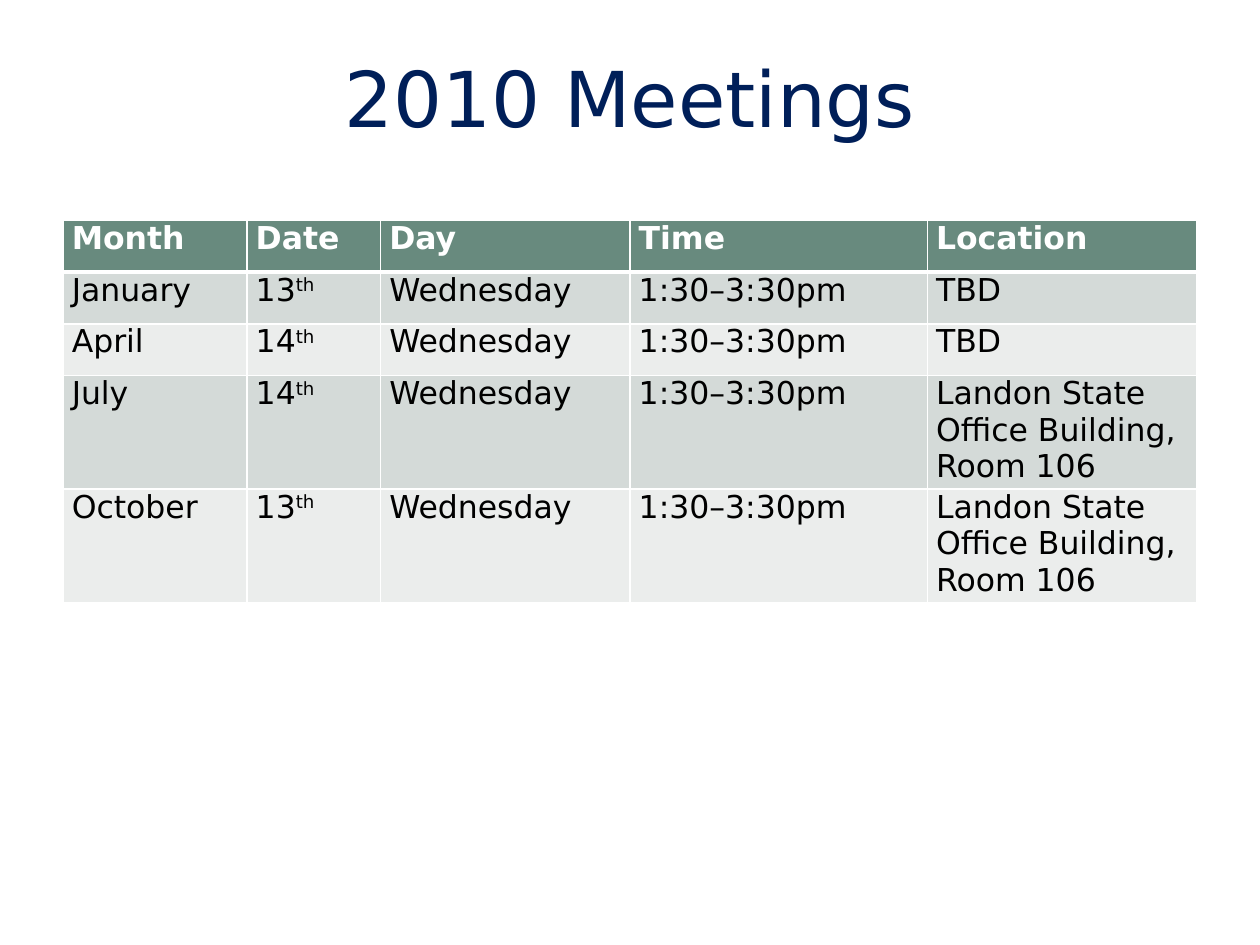
import pptx
import pptx.util
import pptx.dml.color
import pptx.enum.text
import pptx.oxml
import pptx.oxml.ns

Inches = pptx.util.Inches
Pt = pptx.util.Pt
RGBColor = pptx.dml.color.RGBColor

FONT = "DejaVu Sans"
NAVY = RGBColor(0x00, 0x1F, 0x59)
GREEN = RGBColor(0x68, 0x8A, 0x7E)
DARK_BAND = RGBColor(0xD4, 0xDA, 0xD8)
LIGHT_BAND = RGBColor(0xEB, 0xED, 0xEC)
WHITE = RGBColor(0xFF, 0xFF, 0xFF)
BLACK = RGBColor(0x00, 0x00, 0x00)

DAY = "Wednesday"
TIME = "1:30–3:30pm"
LANDON = "Landon State Office Building, Room 106"
ROWS = [
    ("Month", "Date", "Day", "Time", "Location"),
    ("January", "13th", DAY, TIME, "TBD"),
    ("April", "14th", DAY, TIME, "TBD"),
    ("July", "14th", DAY, TIME, LANDON),
    ("October", "13th", DAY, TIME, LANDON),
]
COLUMN_WIDTHS = [1.46, 1.06, 1.98, 2.36, 2.14]
ROW_HEIGHTS = [0.41, 0.41, 0.41, 0.87, 0.87]


def style_font(paragraph, size, color, bold=False):
    paragraph.font.name = FONT
    paragraph.font.size = Pt(size)
    paragraph.font.bold = bold
    paragraph.font.color.rgb = color


def add_border(cell, side, width):
    cell._tc.get_or_add_tcPr().append(pptx.oxml.parse_xml(
        f'<a:ln{side} {pptx.oxml.ns.nsdecls("a")} w="{Pt(width)}">'
        f'<a:solidFill><a:srgbClr val="{WHITE}"/></a:solidFill></a:ln{side}>'))


deck = pptx.Presentation()
deck.slide_width = Inches(10)
deck.slide_height = Inches(7.5)
slide = deck.slides.add_slide(deck.slide_layouts[6])

title = slide.shapes.add_textbox(Inches(0.5), Inches(0.3), Inches(9), Inches(1.25)).text_frame
title.word_wrap = True
title.margin_top = Inches(0.1)
heading = title.paragraphs[0]
heading.text = "2010 Meetings"
heading.alignment = pptx.enum.text.PP_ALIGN.CENTER
style_font(heading, 44, NAVY)

meetings = slide.shapes.add_table(
    len(ROWS), len(COLUMN_WIDTHS), Inches(0.5), Inches(1.75),
    Inches(sum(COLUMN_WIDTHS)), Inches(sum(ROW_HEIGHTS))).table
for column, width in zip(meetings.columns, COLUMN_WIDTHS):
    column.width = Inches(width)

for r, (entries, height) in enumerate(zip(ROWS, ROW_HEIGHTS)):
    meetings.rows[r].height = Inches(height)
    header = r == 0
    band = GREEN if header else DARK_BAND if r % 2 else LIGHT_BAND
    for c, entry in enumerate(entries):
        cell = meetings.cell(r, c)
        cell.margin_left = cell.margin_right = Inches(0.07)
        cell.margin_top = cell.margin_bottom = 0
        for side in "LRTB":
            at_header_rule = (header and side == "B") or (r == 1 and side == "T")
            add_border(cell, side, 3 if at_header_rule else 1)
        cell.fill.solid()
        cell.fill.fore_color.rgb = band
        paragraph = cell.text_frame.paragraphs[0]
        style_font(paragraph, 18, WHITE if header else BLACK, header)
        ordinal = entry.endswith("th") and entry[0].isdigit()
        paragraph.add_run().text = entry[:-2] if ordinal else entry
        if ordinal:
            suffix = paragraph.add_run()
            suffix.text = "th"
            suffix.font._element.set("baseline", "30000")

deck.save("out.pptx")
